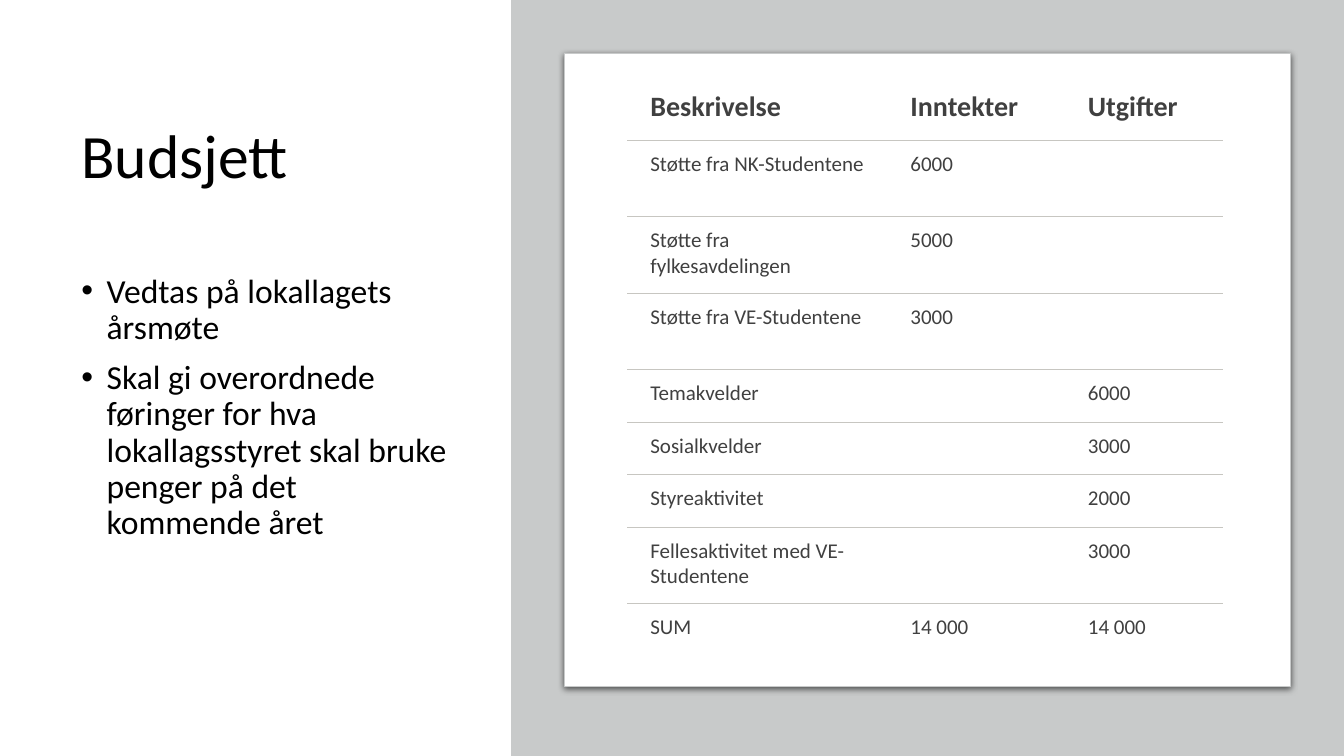
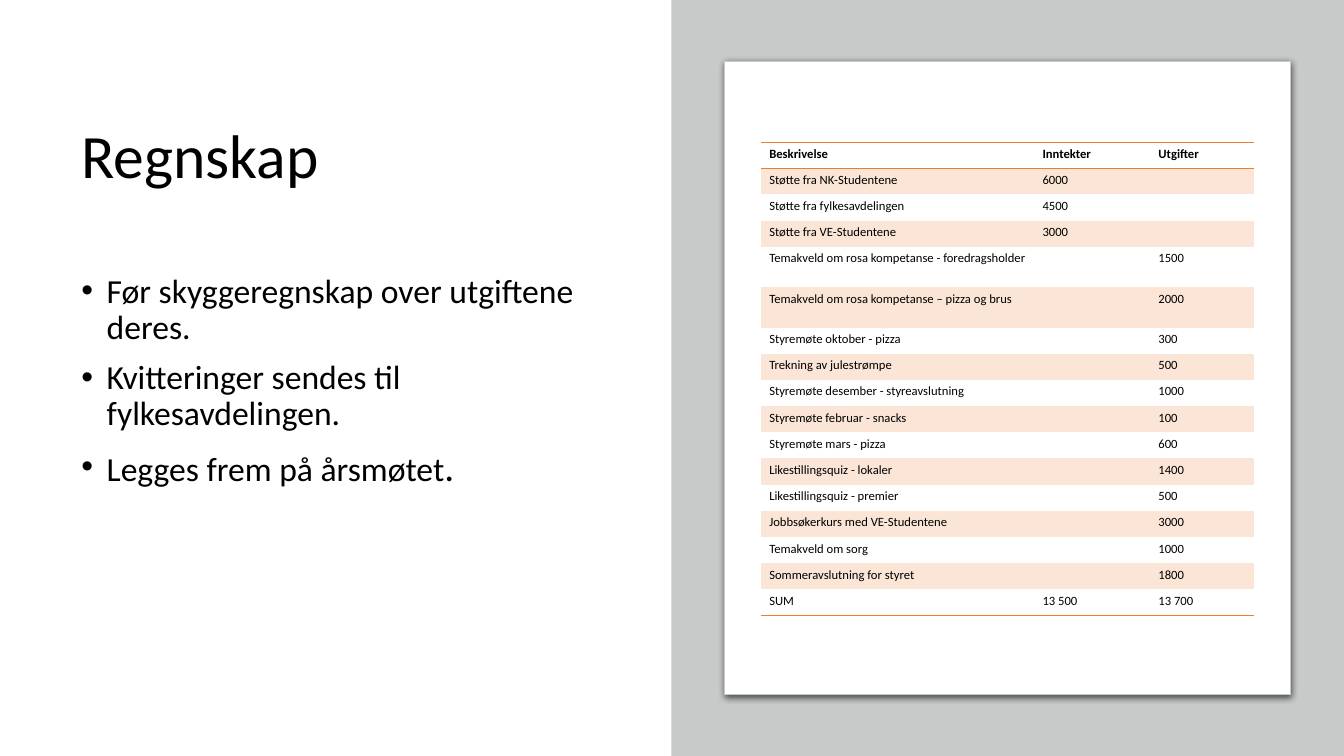
import pptx
import pptx.util
import pptx.dml.color
import pptx.enum.shapes
import pptx.enum.text
import pptx.oxml
from pptx.util import Inches, Pt

COLORS = {
    "text": "000000", "soft": "404040", "white": "FFFFFF", "panel": "C8CACA",
    "rule": "C7C6C1", "orange": "ED7D31", "tint": "FBE5D6",
}
FONT = "Calibri"
NS = 'xmlns:a="http://schemas.openxmlformats.org/drawingml/2006/main"'
PLAIN_TABLE = "{2D5ABB26-0587-4C30-8999-92F81FD0307C}"
RECT = pptx.enum.shapes.MSO_SHAPE.RECTANGLE


def rgb(name):
    return pptx.dml.color.RGBColor.from_string(COLORS[name])


def style(p, size, color="text", bold=False):
    for r in p.runs:
        r.font.name = FONT
        r.font.size = Pt(size)
        r.font.bold = bold
        r.font.color.rgb = rgb(color)


slides = [
    {
        "title": "Budsjett",
        "bullets": [
            "Vedtas på lokallagets årsmøte",
            "Skal gi overordnede føringer for hva lokallagsstyret skal bruke penger på det kommende året",
        ],
        "text_width": 3.83, "panel_left": 5.07, "card_top": 0.53,
        "table_at": (6.22, 0.78), "cols": (2.58, 1.76, 1.57),
        "row_height": 0.52, "tall_height": 0.76, "tall_rows": (1, 2, 3, 7, 8), "head_height": 0.61,
        "margins": (0.23, 0.11, 0.17, 0.11),
        "head_size": 20, "size": 15, "color": "soft", "banded": False,
        "rule": "rule", "rule_width": 0.75, "edges": range(1, 9),
        "rows": [
            ("Beskrivelse", "Inntekter", "Utgifter"),
            ("Støtte fra NK-Studentene", "6000", ""),
            ("Støtte fra fylkesavdelingen", "5000", ""),
            ("Støtte fra VE-Studentene", "3000", ""),
            ("Temakvelder", "", "6000"),
            ("Sosialkvelder", "", "3000"),
            ("Styreaktivitet", "", "2000"),
            ("Fellesaktivitet med VE-Studentene", "", "3000"),
            ("SUM", "14 000", "14 000"),
        ],
    },
    {
        "title": "Regnskap",
        "bullets": [
            "Før skyggeregnskap over utgiftene deres.",
            "Kvitteringer sendes til fylkesavdelingen.",
            "Legges frem på årsmøtet",
        ],
        "last_stop": ".",
        "text_width": 5.41, "panel_left": 6.66, "card_top": 0.61,
        "table_at": (7.55, 1.41), "cols": (2.71, 1.15, 1.03),
        "row_height": 0.26, "tall_height": 0.4, "tall_rows": (4, 5), "head_height": 0.26,
        "margins": (0.08, 0.04, 0.08, 0.04),
        "head_size": 9, "size": 9, "color": "text", "banded": True,
        "rule": "orange", "rule_width": 1, "edges": (0, 1, 17),
        "rows": [
            ("Beskrivelse", "Inntekter", "Utgifter"),
            ("Støtte fra NK-Studentene", "6000", ""),
            ("Støtte fra fylkesavdelingen", "4500", ""),
            ("Støtte fra VE-Studentene", "3000", ""),
            ("Temakveld om rosa kompetanse - foredragsholder", "", "1500"),
            ("Temakveld om rosa kompetanse – pizza og brus", "", "2000"),
            ("Styremøte oktober - pizza", "", "300"),
            ("Trekning av julestrømpe", "", "500"),
            ("Styremøte desember - styreavslutning", "", "1000"),
            ("Styremøte februar - snacks", "", "100"),
            ("Styremøte mars - pizza", "", "600"),
            ("Likestillingsquiz - lokaler", "", "1400"),
            ("Likestillingsquiz - premier", "", "500"),
            ("Jobbsøkerkurs med VE-Studentene", "", "3000"),
            ("Temakveld om sorg", "", "1000"),
            ("Sommeravslutning for styret", "", "1800"),
            ("SUM", "13 500", "13 700"),
        ],
    },
]

prs = pptx.Presentation()
prs.slide_width = Inches(13.33)
prs.slide_height = Inches(7.5)

for d in slides:
    s = prs.slides.add_slide(prs.slide_layouts[6])

    tf = s.shapes.add_textbox(Inches(0.71), Inches(0.69), Inches(d["text_width"]), Inches(1.77)).text_frame
    tf.word_wrap = True
    tf.vertical_anchor = pptx.enum.text.MSO_ANCHOR.MIDDLE
    tf.text = d["title"]
    tf.paragraphs[0].line_spacing = 0.9
    style(tf.paragraphs[0], 44)

    tf = s.shapes.add_textbox(Inches(0.71), Inches(2.67), Inches(d["text_width"]), Inches(4.14)).text_frame
    tf.word_wrap = True
    tf.text = "\n".join(d["bullets"])
    for p in tf.paragraphs:
        p.line_spacing = 0.9
        p.space_before = Pt(10)
        style(p, 24)
        pPr = p._p.get_or_add_pPr()
        pPr.set("marL", str(Inches(0.25)))
        pPr.set("indent", str(-Inches(0.25)))
        pPr.append(pptx.oxml.parse_xml(f'<a:buFont {NS} typeface="Arial"/>'))
        pPr.append(pptx.oxml.parse_xml(f'<a:buChar {NS} char="•"/>'))
    if "last_stop" in d:
        r = p.add_run()
        r.text = d["last_stop"]
        r.font.name = FONT
        r.font.size = Pt(28)
        r.font.color.rgb = rgb("text")

    left = Inches(d["panel_left"])
    panel = s.shapes.add_shape(RECT, left, 0, prs.slide_width - left, prs.slide_height)
    panel.shadow.inherit = False
    panel.fill.solid()
    panel.fill.fore_color.rgb = rgb("panel")
    panel.line.fill.background()

    card = s.shapes.add_shape(RECT, left + Inches(0.53), Inches(d["card_top"]),
                              prs.slide_width - left - Inches(1.06), Inches(6.28))
    card.shadow.inherit = False
    card.fill.solid()
    card.fill.fore_color.rgb = rgb("white")
    card.line.color.rgb = rgb("panel")
    card.line.width = Pt(0.75)
    card._element.spPr.find(pptx.oxml.ns.qn("a:effectLst")).append(pptx.oxml.parse_xml(
        f'<a:outerShdw {NS} blurRad="{Pt(4.5)}" dist="{Pt(1.5)}" dir="5400000" algn="ctr" rotWithShape="0">'
        '<a:srgbClr val="000000"><a:alpha val="63000"/></a:srgbClr></a:outerShdw>'))

    heights = [d["tall_height"] if i in d["tall_rows"] else d["row_height"] for i in range(len(d["rows"]))]
    heights[0] = d["head_height"]
    x, y = d["table_at"]
    table = s.shapes.add_table(len(heights), len(d["cols"]), Inches(x), Inches(y),
                               Inches(sum(d["cols"])), Inches(sum(heights))).table
    table.first_row = False
    table.horz_banding = False
    table._tbl.tblPr.find(pptx.oxml.ns.qn("a:tableStyleId")).text = PLAIN_TABLE
    for col, width in zip(table.columns, d["cols"]):
        col.width = Inches(width)
    for i, (values, height) in enumerate(zip(d["rows"], heights)):
        table.rows[i].height = Inches(height)
        size = d["size"] if i else d["head_size"]
        for cell, value in zip(table.rows[i].cells, values):
            cell.margin_left, cell.margin_top, cell.margin_right, cell.margin_bottom = map(Inches, d["margins"])
            p = cell.text_frame.paragraphs[0]
            if value:
                p.text = value
                style(p, size, d["color"], bold=i == 0)
            else:
                p._p.get_or_add_endParaRPr().set("sz", str(size * 100))
            for tag, edge in (("lnL", None), ("lnR", None), ("lnT", i), ("lnB", i + 1)):
                paint = "<a:noFill/>"
                if edge in d["edges"]:
                    paint = f'<a:solidFill><a:srgbClr val="{COLORS[d["rule"]]}"/></a:solidFill>'
                cell._tc.get_or_add_tcPr().append(pptx.oxml.parse_xml(
                    f'<a:{tag} {NS} w="{Pt(d["rule_width"])}">{paint}</a:{tag}>'))
            if d["banded"] and i % 2:
                cell.fill.solid()
                cell.fill.fore_color.rgb = rgb("tint")
            else:
                cell.fill.background()

prs.save("out.pptx")
